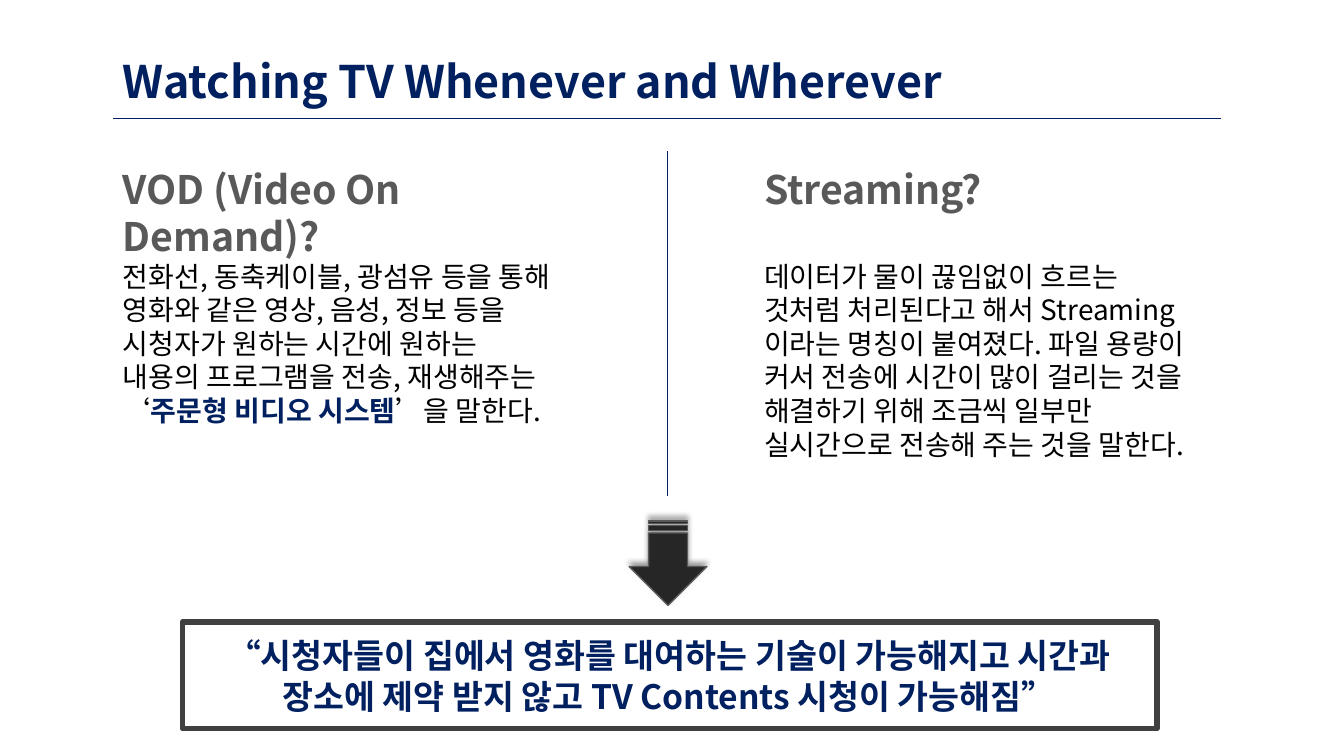
from dataclasses import dataclass

from lxml import etree
from pptx import Presentation
from pptx.dml.color import RGBColor
from pptx.enum import shapes, text
from pptx.oxml import ns
from pptx.util import Cm, Pt


@dataclass(frozen=True)
class Theme:
    font: str = "Noto Sans CJK KR"
    navy: str = "002060"
    grey: str = "595959"
    black: str = "000000"
    frame: str = "404040"
    arrow: str = "262626"
    title: int = 32
    heading: int = 28
    quote: int = 24
    body: int = 20


T = Theme()


def write(sp, box, runs, size, align=text.PP_ALIGN.LEFT):
    """Place a text shape and fill it with (words, colour, bold) runs."""
    sp.left, sp.top, sp.width, sp.height = [Cm(v) for v in box]
    tf = sp.text_frame
    tf.word_wrap = True
    tf.auto_size = text.MSO_AUTO_SIZE.NONE
    tf.vertical_anchor = text.MSO_ANCHOR.TOP
    p = tf.paragraphs[0]
    p.alignment = align
    p.space_before = Pt(0)
    pPr = p._p.get_or_add_pPr()
    pPr.set("marL", "0")
    pPr.set("indent", "0")
    etree.SubElement(pPr, ns.qn("a:buNone"))
    for words, colour, bold in runs:
        r = p.add_run()
        r.text = words
        r.font.name = T.font
        r.font.size = Pt(size)
        r.font.bold = bold
        r.font.color.rgb = RGBColor.from_string(colour)
        etree.SubElement(r._r.rPr, ns.qn("a:ea")).set("typeface", T.font)


def outline(sp, colour, width):
    sp.line.color.rgb = RGBColor.from_string(colour)
    sp.line.width = Pt(width)


prs = Presentation()
prs.slide_width, prs.slide_height = Cm(33.87), Cm(19.05)
s = prs.slides.add_slide(prs.slide_layouts[4])  # title and two headed columns
ph = s.placeholders

# Title
write(s.shapes.title, (2.84, 1.22, 25.83, 1.63),
      [("Watching TV Whenever and Wherever", T.navy, True)], T.title)

# Two columns: heading above body
left, right = 2.84, 19
heading_top, body_top, body_width = 4.04, 6.4, 11.51
write(ph[1], (left, heading_top, 12.55, 1.45),
      [("VOD (Video On Demand)?", T.grey, True)], T.heading)
write(ph[2], (left, body_top, body_width, 10.9), [
    ("전화선, 동축케이블, 광섬유 등을 통해 영화와 같은 영상, 음성, 정보 등을 시청자가 "
     "원하는 시간에 원하는 내용의 프로그램을 전송, 재생해주는 ‘", T.black, False),
    ("주문형 비디오 시스템", T.navy, True),
    ("’을 말한다.", T.black, False)], T.body)
write(ph[3], (right, heading_top, 7.9, 1.45),
      [("Streaming?", T.grey, True)], T.heading)
write(ph[4], (right, body_top, body_width, 8.97), [
    ("데이터가 물이 끊임없이 흐르는 것처럼 처리된다고 해서 Streaming 이라는 명칭이 "
     "붙여졌다. 파일 용량이 커서 전송에 시간이 많이 걸리는 것을 해결하기 위해 조금씩 "
     "일부만 실시간으로 전송해 주는 것을 말한다.", T.black, False)], T.body)

# Title rule and column divider
for ends in ((30.78, 2.97, 2.84, 2.97), (16.81, 3.81, 16.81, 12.5)):
    rule = s.shapes.add_connector(shapes.MSO_CONNECTOR.STRAIGHT, *[Cm(v) for v in ends])
    outline(rule, T.navy, 0.5)
    etree.SubElement(rule._element.spPr, ns.qn("a:effectLst"))

# Conclusion in a frame
quote = s.shapes.add_textbox(0, 0, 0, 0)
write(quote, (4.65, 15.88, 24.41, 2.31),
      [("“시청자들이 집에서 영화를 대여하는 기술이 가능해지고 시간과 장소에 제약 받지 않고 "
        "TV Contents 시청이 가능해짐”", T.navy, True)], T.quote, text.PP_ALIGN.CENTER)
frame = s.shapes.add_shape(shapes.MSO_SHAPE.RECTANGLE,
                           Cm(4.6), Cm(15.67), Cm(24.56), Cm(2.69))
frame.shadow.inherit = False
frame.fill.background()
outline(frame, T.frame, 4)

# Arrow down to the conclusion, with a soft shadow above it
arrow = s.shapes.add_shape(shapes.MSO_SHAPE.STRIPED_RIGHT_ARROW,
                           Cm(15.77), Cm(13.21), Cm(2.13), Cm(1.96))
arrow.rotation = 90
arrow.fill.solid()
arrow.fill.fore_color.rgb = RGBColor.from_string(T.arrow)
outline(arrow, T.grey, 1)
arrow.shadow.inherit = False
effects = arrow._element.spPr.find(ns.qn("a:effectLst"))
shadow = etree.SubElement(effects, ns.qn("a:outerShdw"), blurRad=str(Pt(4)),
                          dist=str(Pt(3)), dir=str(270 * 60000), rotWithShape="0")
tint = etree.SubElement(shadow, ns.qn("a:srgbClr"), val=T.black)
etree.SubElement(tint, ns.qn("a:alpha"), val="40000")

prs.save("out.pptx")
